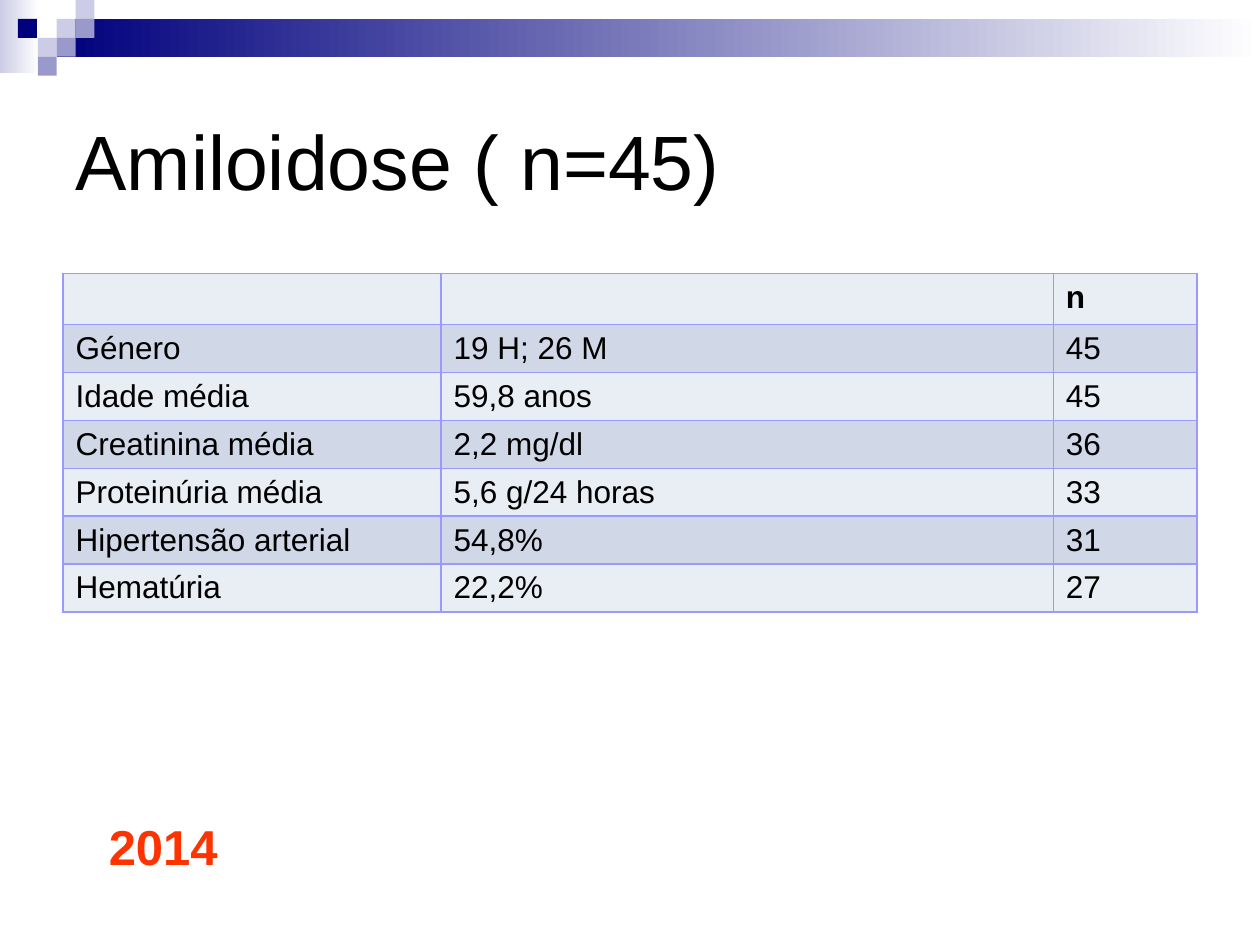
from pptx import Presentation
from pptx.dml.color import RGBColor
from pptx.enum.shapes import MSO_SHAPE
from pptx.enum.text import MSO_ANCHOR, MSO_AUTO_SIZE, PP_ALIGN
from pptx.oxml import parse_xml
from pptx.oxml.ns import nsdecls
from pptx.util import Inches, Pt

RECTANGLE = MSO_SHAPE.RECTANGLE
MIDDLE = MSO_ANCHOR.MIDDLE
NO_AUTOFIT = MSO_AUTO_SIZE.NONE
GROW = MSO_AUTO_SIZE.SHAPE_TO_FIT_TEXT
LEFT, CENTER = PP_ALIGN.LEFT, PP_ALIGN.CENTER

BLACK = RGBColor(0x00, 0x00, 0x00)
WHITE = RGBColor(0xFF, 0xFF, 0xFF)
NAVY = RGBColor(0x00, 0x00, 0x7D)
LAVENDER = RGBColor(0xCC, 0xCC, 0xE6)
PERIWINKLE = RGBColor(0x99, 0x99, 0xCC)
BORDER = RGBColor(0x99, 0x99, 0xFF)
LIGHT_BAND = RGBColor(0xE9, 0xED, 0xF4)
DARK_BAND = RGBColor(0xD0, 0xD8, 0xE8)
ORANGE = RGBColor(0xFF, 0x33, 0x00)

SLIDE_WIDTH, SLIDE_HEIGHT = 10, 7.5
TILE = 0.15
TILES = [
    (3, 1, LAVENDER), (4, 0, LAVENDER), (4, 1, PERIWINKLE),
    (2, 2, LAVENDER), (0.95, 1, NAVY), (3, 2, PERIWINKLE),
    (2, 3, PERIWINKLE),
]
COLUMN_WIDTHS = [3, 4.86, 1.14]
ROW_HEIGHT = 0.35
ROWS = [
    ("", "", "n"),
    ("Género", "19 H; 26 M", "45"),
    ("Idade média", "59,8 anos", "45"),
    ("Creatinina média", "2,2 mg/dl", "36"),
    ("Proteinúria média", "5,6 g/24 horas", "33"),
    ("Hipertensão arterial", "54,8%", "31"),
    ("Hematúria", "22,2%", "27"),
]


def write_text(frame, text, size=18, color=BLACK, bold=False, align=LEFT):
    paragraph = frame.paragraphs[0]
    paragraph.alignment = align
    paragraph.font.size = Pt(size)
    if text:
        run = paragraph.add_run()
        run.text = text
        run.font.name = "Arial"
        run.font.size = Pt(size)
        run.font.bold = bold
        run.font.color.rgb = color
    return paragraph


def add_rectangle(slide, box, color, fade_to=None):
    shape = slide.shapes.add_shape(RECTANGLE, *map(Inches, box))
    shape.shadow.inherit = False
    shape.line.fill.background()
    if fade_to is None:
        shape.fill.solid()
        shape.fill.fore_color.rgb = color
    else:
        shape.fill.gradient()
        shape.fill.gradient_angle = 0
        for stop, stop_color in zip(shape.fill.gradient_stops, (color, fade_to)):
            stop.color.rgb = stop_color


def add_banner(slide, box):
    left, top, width, height = box
    bar_left = 3 * TILE
    add_rectangle(slide, (left, top, 0.31, height), LAVENDER, WHITE)
    add_rectangle(slide, (left + bar_left, top + TILE, width - bar_left, 2 * TILE),
                  NAVY, WHITE)
    for column, row, color in TILES:
        add_rectangle(slide, (left + column * TILE, top + row * TILE, TILE, TILE), color)


def place_title(slide, box, text):
    title = slide.shapes.title
    title.left, title.top, title.width, title.height = map(Inches, box)
    frame = title.text_frame
    frame.auto_size = NO_AUTOFIT
    frame.word_wrap = True
    frame.vertical_anchor = MIDDLE
    write_text(frame, text, size=44)
    slide.shapes.element.append(title.element)


def set_borders(cell):
    properties = cell._tc.get_or_add_tcPr()
    for position, side in enumerate(("lnL", "lnR", "lnT", "lnB")):
        properties.insert(position, parse_xml(
            f'<a:{side} {nsdecls("a")} w="{Pt(1)}"><a:solidFill>'
            f'<a:srgbClr val="{BORDER}"/></a:solidFill></a:{side}>'))


def add_results_table(slide, box):
    frame = slide.shapes.add_table(len(ROWS), len(COLUMN_WIDTHS), *map(Inches, box))
    table = frame.table
    for column, width in zip(table.columns, COLUMN_WIDTHS):
        column.width = Inches(width)
    for row_index, (row, values) in enumerate(zip(table.rows, ROWS)):
        row.height = Inches(ROW_HEIGHT)
        for cell, value in zip(row.cells, values):
            cell.fill.solid()
            cell.fill.fore_color.rgb = DARK_BAND if row_index % 2 else LIGHT_BAND
            set_borders(cell)
            write_text(cell.text_frame, value, bold=row_index == 0)


def add_year(slide, box, text):
    frame = slide.shapes.add_textbox(*map(Inches, box)).text_frame
    frame.word_wrap = True
    frame.auto_size = GROW
    paragraph = write_text(frame, text, size=28, color=ORANGE, bold=True, align=CENTER)
    paragraph.space_before = Pt(14)


def main():
    presentation = Presentation()
    presentation.slide_width = Inches(SLIDE_WIDTH)
    presentation.slide_height = Inches(SLIDE_HEIGHT)
    slide = presentation.slides.add_slide(presentation.slide_layouts[5])
    margin = SLIDE_WIDTH * 0.05
    content_width = SLIDE_WIDTH - 2 * margin
    add_banner(slide, (0, 0, SLIDE_WIDTH, 0.58))
    place_title(slide, (margin, 0.52, content_width, SLIDE_HEIGHT * 0.2),
                "Amiloidose ( n=45)")
    add_results_table(slide, (margin, 2.17, content_width, ROW_HEIGHT * len(ROWS)))
    add_year(slide, (0.35, 6.43, 1.89, 0.57), "2014")
    presentation.save("out.pptx")


if __name__ == "__main__":
    main()
